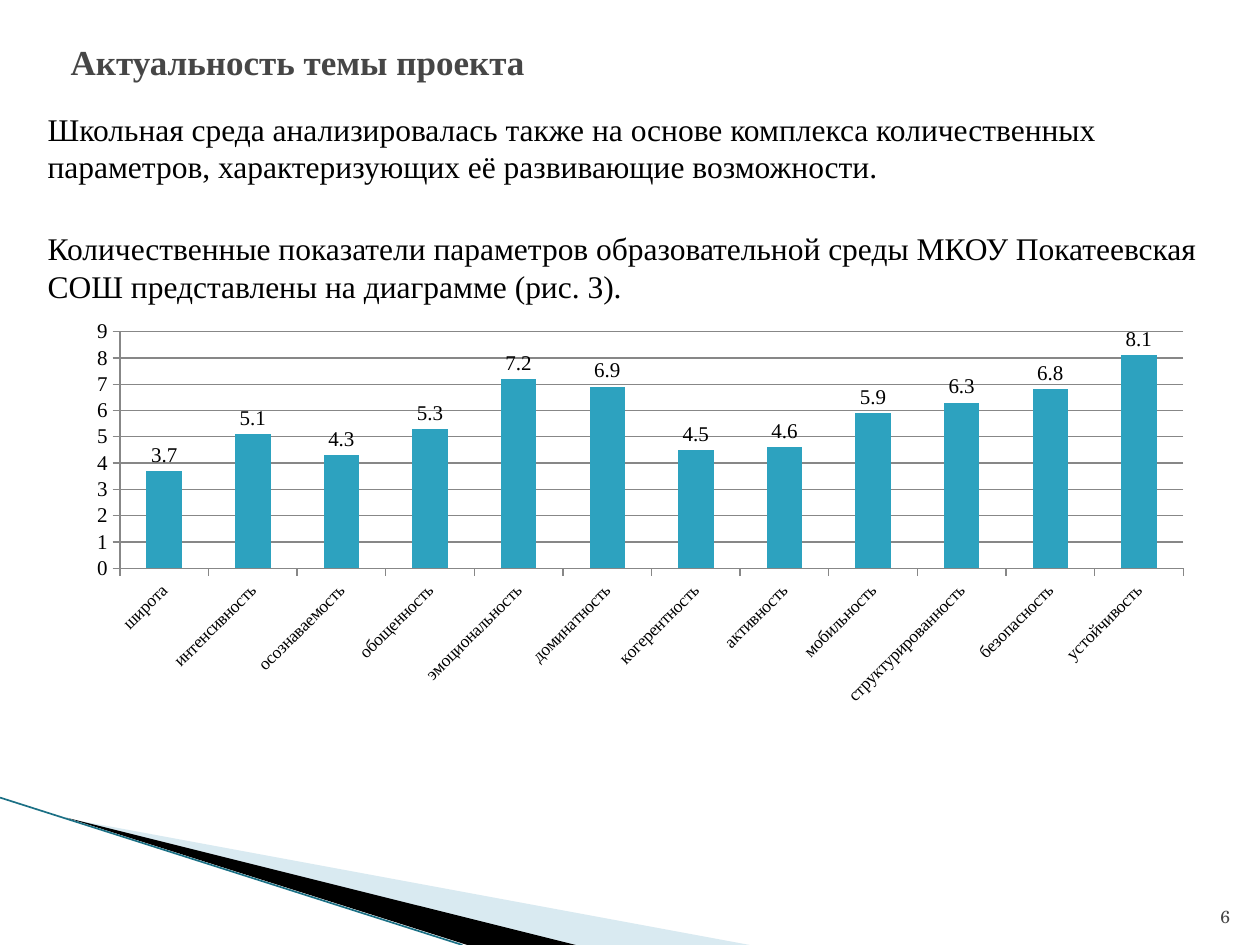
"""Build the slide on the school environment's quantitative parameters."""
from lxml import etree
from pptx import Presentation
from pptx.chart.data import CategoryChartData
from pptx.dml.color import RGBColor
from pptx.enum.chart import XL_CHART_TYPE, XL_LABEL_POSITION, XL_TICK_MARK
from pptx.enum.shapes import MSO_CONNECTOR
from pptx.enum.text import MSO_ANCHOR, PP_ALIGN
from pptx.oxml.ns import qn
from pptx.util import Inches, Pt

COLUMNS = XL_CHART_TYPE.COLUMN_CLUSTERED
OUTSIDE_END = XL_LABEL_POSITION.OUTSIDE_END
TICK_OUT, TICK_NONE = XL_TICK_MARK.OUTSIDE, XL_TICK_MARK.NONE
STRAIGHT = MSO_CONNECTOR.STRAIGHT
TOP, BOTTOM = MSO_ANCHOR.TOP, MSO_ANCHOR.BOTTOM
LEFT, RIGHT = PP_ALIGN.LEFT, PP_ALIGN.RIGHT

BLACK = RGBColor(0x00, 0x00, 0x00)
SLATE = RGBColor(0x46, 0x46, 0x46)
PALE_BLUE = RGBColor(0xA0, 0xCB, 0xDC)
DEEP_TEAL = RGBColor(0x1B, 0x70, 0x85)
TEAL = RGBColor(0x2D, 0xA2, 0xBF)
AXIS_GRAY = RGBColor(0x87, 0x87, 0x87)
SERIF = "Times New Roman"
HUNDREDTH = Inches(0.01)

TITLE = "Актуальность темы проекта"
PARAGRAPHS = [
    "Школьная среда анализировалась также на основе комплекса количественных "
    "параметров, характеризующих её развивающие возможности.",
    "Количественные показатели параметров образовательной среды МКОУ "
    "Покатеевская СОШ представлены на диаграмме (рис. 3).",
]
PAGE_NUMBER = "6"
SCORES = {
    "широта": 3.7, "интенсивность": 5.1, "осознаваемость": 4.3,
    "обощенность": 5.3, "эмоциональность": 7.2, "доминатность": 6.9,
    "когерентность": 4.5, "активность": 4.6, "мобильность": 5.9,
    "структурированность": 6.3, "безопасность": 6.8, "устойчивость": 8.1,
}
WEDGES = [
    (PALE_BLUE, 40, [(55, 650), (595, 750), (456, 750)]),
    (BLACK, 100, [(53, 649), (457, 750), (371, 750)]),
]
TITLE_FONT = {"name": SERIF, "size": Pt(20), "bold": True}
BODY_FONT = {"name": SERIF, "size": Pt(18)}
NUMBER_FONT = {"name": "TeX Gyre Schola", "size": Pt(10)}
CHART_FONT = {"name": SERIF, "size": Pt(12), "bold": False}
CATEGORY_FONT = {**CHART_FONT, "size": Pt(10)}


def format_font(font, values, color):
    for key, value in values.items():
        setattr(font, key, value)
    font.color.rgb = color


def write(holder, text, values, color, anchor=TOP, align=LEFT):
    frame = holder.text_frame
    frame.word_wrap = True
    frame.vertical_anchor = anchor
    frame.text = text
    paragraph = frame.paragraphs[0]
    paragraph.alignment = align
    format_font(paragraph.runs[0].font, values, color)


def add_wedges(slide):
    for color, opacity, points in WEDGES:
        builder = slide.shapes.build_freeform(*points[0], scale=HUNDREDTH)
        builder.add_line_segments(points[1:])
        wedge = builder.convert_to_shape()
        wedge.shadow.inherit = False
        wedge.fill.solid()
        wedge.fill.fore_color.rgb = color
        wedge.line.fill.background()
        if opacity < 100:
            tint = next(wedge.element.spPr.iter(qn("a:srgbClr")))
            etree.SubElement(tint, qn("a:alpha"), val=str(opacity * 1000))
    edge = slide.shapes.add_connector(
        STRAIGHT, 0, Inches(6.33), Inches(3.67), Inches(7.5))
    edge.line.color.rgb = DEEP_TEAL
    edge.line.width = Pt(0.95)
    etree.SubElement(edge.element.spPr, qn("a:effectLst"))


def add_score_chart(slide):
    scores = CategoryChartData()
    scores.categories = list(SCORES)
    scores.add_series("Series 1", list(SCORES.values()))
    box = [Inches(n) for n in (0.59, 2.48, 8.98, 3.18)]
    chart = slide.shapes.add_chart(COLUMNS, *box, scores).chart
    chart.has_legend = chart.has_title = False
    format_font(chart.font, CHART_FONT, BLACK)

    plot = chart.plots[0]
    plot.gap_width = 150
    plot.vary_by_categories = False
    bars = plot.series[0].format.fill
    bars.solid()
    bars.fore_color.rgb = TEAL
    plot.has_data_labels = True
    labels = plot.data_labels
    labels.show_value = True
    labels.position = OUTSIDE_END
    format_font(labels.font, CHART_FONT, BLACK)

    values, categories = chart.value_axis, chart.category_axis
    for axis, font in ((values, CHART_FONT), (categories, CATEGORY_FONT)):
        axis.major_tick_mark = TICK_OUT
        axis.minor_tick_mark = TICK_NONE
        axis.format.line.color.rgb = AXIS_GRAY
        format_font(axis.tick_labels.font, font, BLACK)
    values.minimum_scale, values.maximum_scale, values.major_unit = 0, 9, 1
    values.has_major_gridlines = True
    values.major_gridlines.format.line.color.rgb = AXIS_GRAY
    turn = categories.format.line and categories.tick_labels.font
    turn.color.rgb = BLACK
    body = next(chart.element.iter(qn("c:catAx"))).find(qn("c:txPr"))
    body.find(qn("a:bodyPr")).set("rot", "-2700000")


def main():
    deck = Presentation()
    deck.slide_width, deck.slide_height = Inches(10), Inches(7.5)
    slide = deck.slides.add_slide(deck.slide_layouts[5])
    add_wedges(slide)

    title = slide.shapes.title
    title.left, title.top = Inches(0.46), Inches(0.21)
    title.width, title.height = Inches(9), Inches(0.85)
    write(title, TITLE, TITLE_FONT, SLATE)
    title.text_frame.margin_top = Inches(0.11)

    for row, text in enumerate(PARAGRAPHS):
        box = slide.shapes.add_textbox(
            Inches(0.28), Inches(0.82 + 0.95 * row), Inches(9.37), Inches(0.71))
        write(box, text, BODY_FONT, BLACK)

    number = slide.shapes.add_textbox(
        Inches(9.46), Inches(7.01), Inches(0.4), Inches(0.4))
    write(number, PAGE_NUMBER, NUMBER_FONT, SLATE, BOTTOM, RIGHT)
    add_score_chart(slide)
    deck.save("out.pptx")


if __name__ == "__main__":
    main()
